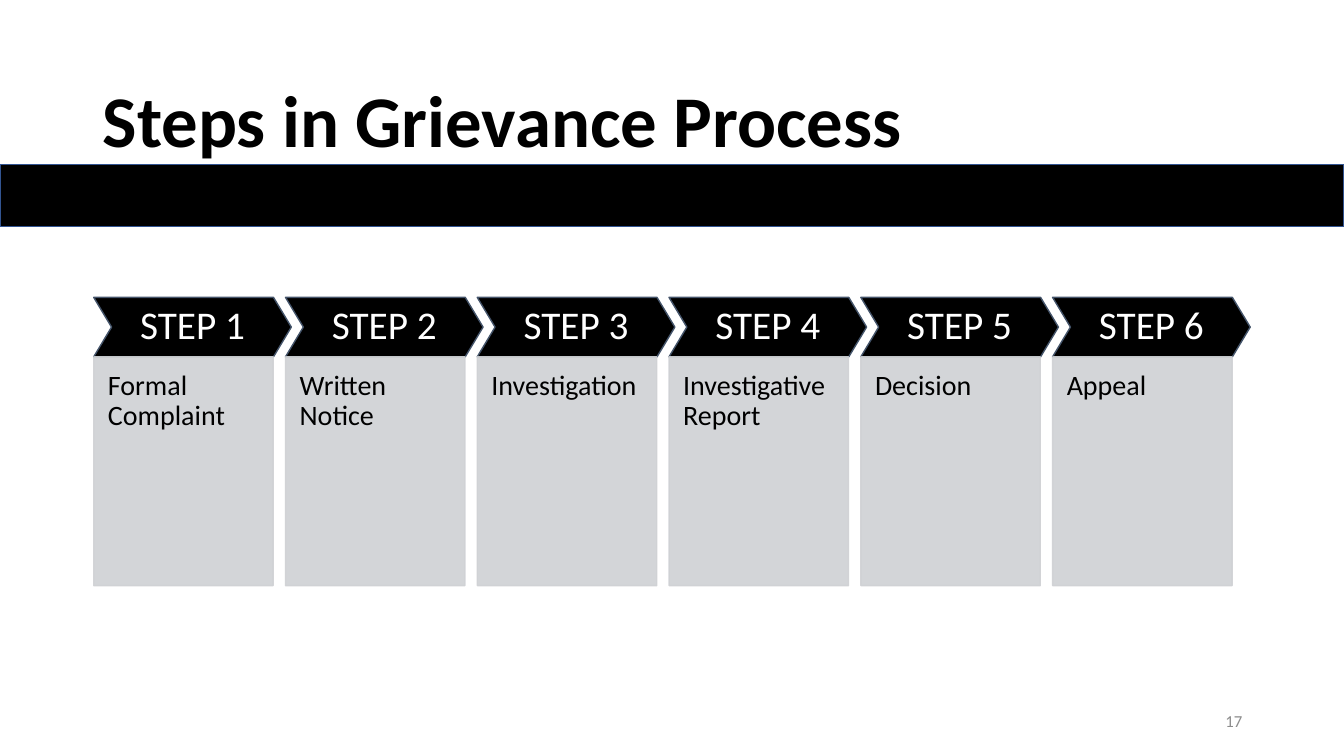
from dataclasses import dataclass

from pptx import Presentation
from pptx import util as u
from pptx.dml.color import RGBColor
from pptx.enum import shapes, text
from pptx.oxml.ns import qn
from lxml import etree


@dataclass(frozen=True)
class Theme:
    font: str = "Calibri"
    black: str = "000000"
    white: str = "FFFFFF"
    panel: str = "CFD1D4"
    chevron_line: str = "44546A"
    band_line: str = "325491"
    muted: str = "8C8C8C"
    title_size: int = 52
    step_size: int = 28
    detail_size: int = 20
    number_size: int = 12


class Deck:
    def __init__(self, theme):
        self.theme = theme
        self.prs = Presentation()
        self.prs.slide_width = u.Inches(13.33)
        self.prs.slide_height = u.Inches(7.5)
        self.slide = self.prs.slides.add_slide(self.prs.slide_layouts[5])

    def set_text(self, frame, wording, size, color, align=text.PP_ALIGN.LEFT,
                 anchor=text.MSO_ANCHOR.MIDDLE, insets=None, bold=False, spacing=0.9):
        """Fill a text frame with one formatted run; insets run left, top, right, bottom."""
        frame.word_wrap = True
        frame.auto_size = text.MSO_AUTO_SIZE.NONE
        frame.vertical_anchor = anchor
        if insets:
            (frame.margin_left, frame.margin_top,
             frame.margin_right, frame.margin_bottom) = map(u.Inches, insets)
        paragraph = frame.paragraphs[0]
        paragraph.alignment = align
        paragraph.line_spacing = spacing
        run = paragraph.add_run()
        run.text = wording
        run.font.name = self.theme.font
        run.font.size = u.Pt(size)
        run.font.bold = bold
        run.font.color.rgb = RGBColor.from_string(color)

    def title(self, wording, *box):
        heading = self.slide.shapes.title
        heading.left, heading.top, heading.width, heading.height = map(u.Inches, box)
        self.set_text(heading.text_frame, wording, self.theme.title_size,
                      self.theme.black, bold=True)

    def block(self, kind, fill, line, *box, opacity=100):
        """Add a filled preset shape with a 1 pt outline."""
        block = self.slide.shapes.add_shape(kind, *map(u.Inches, box))
        block.shadow.inherit = False
        block.fill.solid()
        block.fill.fore_color.rgb = RGBColor.from_string(fill)
        block.line.color.rgb = RGBColor.from_string(line)
        block.line.width = u.Pt(1)
        if opacity < 100:
            for color in block._element.spPr.iter(qn("a:srgbClr")):
                etree.SubElement(color, qn("a:alpha")).set("val", str(opacity * 1000))
        return block

    def step(self, label, detail, left):
        """Add a chevron with its step label above a panel with the detail."""
        theme = self.theme
        chevron = self.block(shapes.MSO_SHAPE.CHEVRON, theme.black, theme.chevron_line,
                             left, 2.95, 1.96, 0.59)
        chevron.adjustments[0] = 0.3
        self.set_text(chevron.text_frame, label, theme.step_size, theme.white,
                      align=text.PP_ALIGN.CENTER, insets=(0.07, 0.07, 0.07, 0.07))
        panel = self.block(shapes.MSO_SHAPE.RECTANGLE, theme.panel, theme.panel,
                           left, 3.54, 1.78, 2.27, opacity=90)
        self.set_text(panel.text_frame, detail, theme.detail_size, theme.black,
                      anchor=text.MSO_ANCHOR.TOP, insets=(0.14, 0.14, 0.14, 0.28))

    def page_number(self, number, *box):
        footer = self.slide.shapes.add_textbox(*map(u.Inches, box))
        self.set_text(footer.text_frame, number, self.theme.number_size, self.theme.muted,
                      align=text.PP_ALIGN.RIGHT, spacing=1.0)


STEPS = ["Formal Complaint", "Written Notice", "Investigation",
         "Investigative Report", "Decision", "Appeal"]
FIRST_LEFT, LAST_LEFT = 0.93, 10.44


def main():
    theme = Theme()
    deck = Deck(theme)
    deck.title("Steps in Grievance Process", 0.92, 0.61, 11.5, 1.24)
    pitch = (LAST_LEFT - FIRST_LEFT) / (len(STEPS) - 1)
    for index, detail in enumerate(STEPS):
        deck.step(f"STEP {index + 1}", detail, FIRST_LEFT + index * pitch)
    deck.block(shapes.MSO_SHAPE.RECTANGLE, theme.black, theme.band_line,
               0, 1.63, 13.33, 0.62)
    deck.page_number("17", 9.42, 6.95, 3, 0.4)
    deck.prs.save("out.pptx")


if __name__ == "__main__":
    main()
